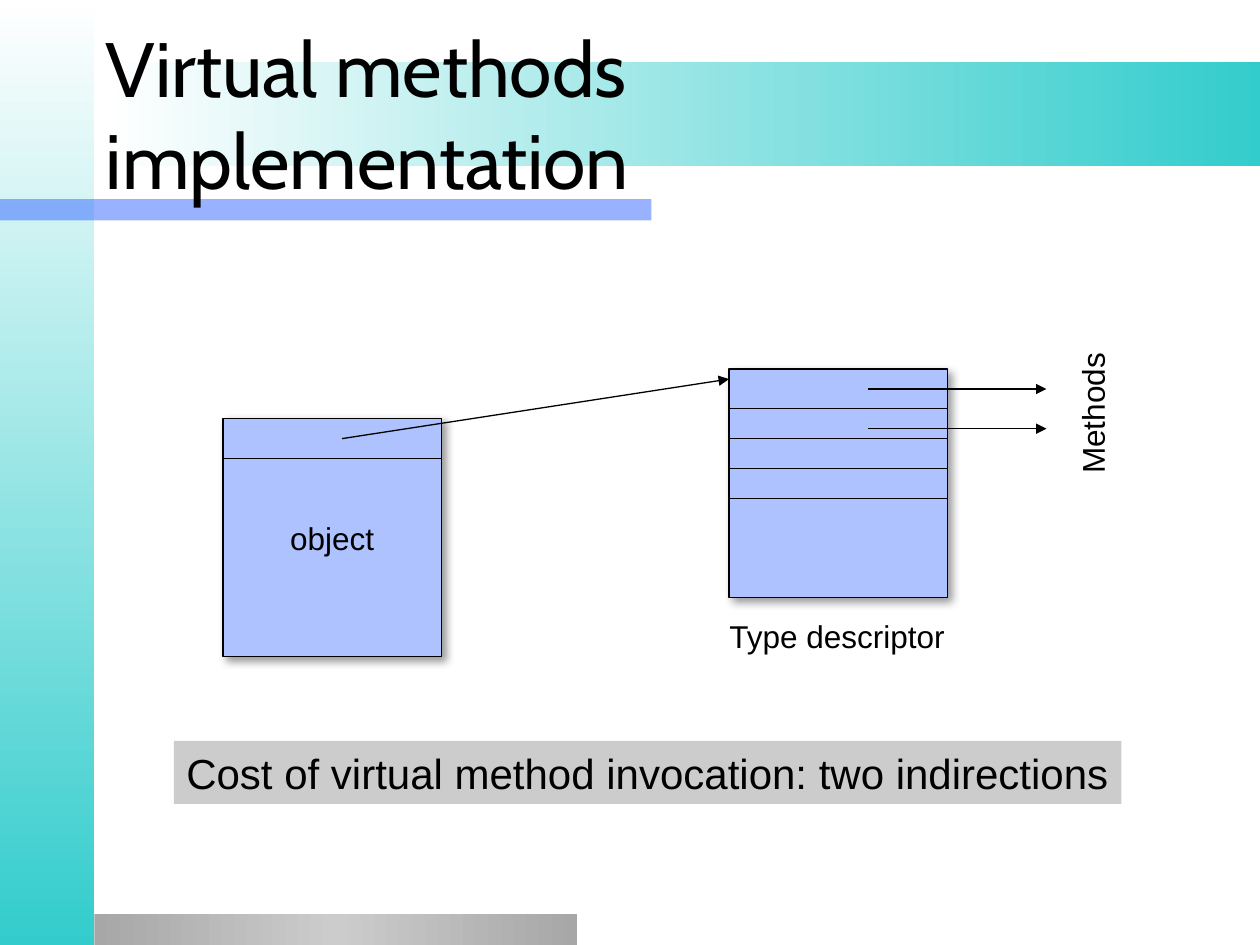
import dataclasses
import pptx
import pptx.dml.color
import pptx.enum.shapes
import pptx.enum.text
import pptx.oxml
import pptx.oxml.ns
import pptx.util

PAGE_WIDTH, PAGE_HEIGHT = 10, 7.5
CELL = 0.2 / 2.54  # diagram grid step: 2 mm in inches
ORIGIN_X, ORIGIN_Y = 1.77, 2.93
DRAWING_NS = pptx.oxml.ns.nsdecls("a")
BLACK, BOX_BLUE, TEAL = "000000", "ADC2FF", "33CCCC"
RECTANGLE = pptx.enum.shapes.MSO_SHAPE.RECTANGLE
ALIGN = pptx.enum.text.PP_ALIGN
inches = pptx.util.Inches


@dataclasses.dataclass
class Band:
    """Backdrop strip, in inches, with evenly spaced gradient colours."""
    left: float
    top: float
    width: float
    height: float
    colours: tuple
    angle: int = 0


@dataclasses.dataclass
class Block:
    """Memory block, in grid columns and rows, with divider offsets."""
    column: int
    row: int
    columns: int
    rows: int
    dividers: tuple


@dataclasses.dataclass
class Label:
    """Caption box in inches."""
    text: str
    left: float
    top: float
    width: float
    height: float
    size: int = 18
    rotation: int = 0
    fill: str = ""


BANDS = [
    Band(0, 0, 0.75, PAGE_HEIGHT, ("FFFFFF", TEAL), 90),
    Band(0, 1.58, 5.17, 0.17, ("3366FF",)),
    Band(0.75, 7.25, 3.83, 0.25, ("A7A7A7", "CCCCCC", "A7A7A7")),
    Band(0.84, 0.49, 9.16, 0.83, ("FFFFFF", TEAL)),
]
OBJECT = Block(0, 5, 22, 24, (4,))
DESCRIPTOR = Block(51, 0, 22, 23, (4, 7, 10, 13))
# Arrows as grid points: column and row from, column and row to
ARROWS = [(12, 7, 51, 1), (65, 2, 83, 2), (65, 6, 83, 6)]
LABELS = [
    Label("Type descriptor", 5.69, 4.85, 1.92, 0.4),
    Label("Methods", 8.09, 3.08, 1.16, 0.4, rotation=270),
    Label("Cost of virtual method invocation: two indirections",
          1.38, 5.88, 7.52, 0.5, size=24, fill="CCCCCC"),
]


def colour(code: str):
    return pptx.dml.color.RGBColor.from_string(code)


def grid_x(column: float):
    return inches(ORIGIN_X + column * CELL)


def grid_y(row: float):
    return inches(ORIGIN_Y + row * CELL)


def append_xml(parent, markup: str) -> None:
    parent.append(pptx.oxml.parse_xml(markup))


def write(shape, text: str, size: int, font: str = "Arial",
          align=ALIGN.LEFT) -> None:
    frame = shape.text_frame
    frame.text = text
    para = frame.paragraphs[0]
    para.alignment = align
    span = para.runs[0]
    span.font.size = pptx.util.Pt(size)
    span.font.name = font
    span.font.color.rgb = colour(BLACK)


def draw_band(page, band: Band) -> None:
    box = page.shapes.add_shape(RECTANGLE, *map(
        inches, (band.left, band.top, band.width, band.height)))
    box.shadow.inherit = False
    box.line.fill.background()
    if len(band.colours) == 1:
        # A single colour is half transparent
        box.fill.solid()
        box.fill.fore_color.rgb = colour(band.colours[0])
        paint = next(box.element.spPr.iter(pptx.oxml.ns.qn("a:srgbClr")))
        append_xml(paint, f'<a:alpha {DRAWING_NS} val="50000"/>')
        return
    box.fill.gradient()
    box.fill.gradient_angle = -band.angle % 360
    stops = next(box.element.spPr.iter(pptx.oxml.ns.qn("a:gsLst")))
    for stop in list(stops):
        stops.remove(stop)
    for index, code in enumerate(band.colours):
        position = 100000 * index // (len(band.colours) - 1)
        append_xml(stops, f'<a:gs {DRAWING_NS} pos="{position}">'
                          f'<a:srgbClr val="{code}"/></a:gs>')


def draw_line(page, start_column: float, start_row: float,
              end_column: float, end_row: float, arrow: bool = False) -> None:
    line = page.shapes.add_connector(
        pptx.enum.shapes.MSO_CONNECTOR.STRAIGHT,
        grid_x(start_column), grid_y(start_row),
        grid_x(end_column), grid_y(end_row))
    line.line.color.rgb = colour(BLACK)
    line.line.width = pptx.util.Pt(0.75)
    if arrow:
        append_xml(line.line._get_or_add_ln(),
                   f'<a:tailEnd {DRAWING_NS} type="triangle"/>')
    append_xml(line.element.spPr, f'<a:effectLst {DRAWING_NS}/>')


def draw_block(page, block: Block):
    box = page.shapes.add_shape(
        RECTANGLE, grid_x(block.column), grid_y(block.row),
        inches(block.columns * CELL), inches(block.rows * CELL))
    box.fill.solid()
    box.fill.fore_color.rgb = colour(BOX_BLUE)
    box.line.color.rgb = colour(BLACK)
    box.line.width = pptx.util.Pt(0.75)
    box.shadow.inherit = False
    effects = box.element.spPr.find(pptx.oxml.ns.qn("a:effectLst"))
    append_xml(effects, f'<a:outerShdw {DRAWING_NS} blurRad="63500" '
                        'dist="38100" dir="2700000" algn="tl" rotWithShape="0">'
                        f'<a:srgbClr val="{BLACK}"><a:alpha val="40000"/>'
                        '</a:srgbClr></a:outerShdw>')
    for offset in block.dividers:
        row = block.row + offset
        draw_line(page, block.column, row, block.column + block.columns, row)
    return box


def draw_label(page, label: Label) -> None:
    box = page.shapes.add_textbox(*map(
        inches, (label.left, label.top, label.width, label.height)))
    write(box, label.text, label.size)
    box.text_frame.word_wrap = False
    box.text_frame.auto_size = pptx.enum.text.MSO_AUTO_SIZE.SHAPE_TO_FIT_TEXT
    box.rotation = label.rotation
    if label.fill:
        box.fill.solid()
        box.fill.fore_color.rgb = colour(label.fill)


def main() -> None:
    deck = pptx.Presentation()
    deck.slide_width, deck.slide_height = inches(PAGE_WIDTH), inches(PAGE_HEIGHT)
    page = deck.slides.add_slide(deck.slide_layouts[5])

    # Backdrop, with the title raised above it
    for band in BANDS:
        draw_band(page, band)
    title = page.shapes.title
    title.element.getparent().append(title.element)
    title.left, title.top = inches(0.74), inches(0.27)
    title.width, title.height = inches(8.5), inches(1.25)
    write(title, "Virtual methods implementation", 44, "Cabin")
    title.text_frame.vertical_anchor = pptx.enum.text.MSO_ANCHOR.MIDDLE
    title.text_frame.auto_size = pptx.enum.text.MSO_AUTO_SIZE.NONE

    # Object and its type descriptor
    object_box = draw_block(page, OBJECT)
    write(object_box, "object", 18, align=ALIGN.CENTER)
    object_box.text_frame.word_wrap = False
    draw_block(page, DESCRIPTOR)

    # References and captions
    for arrow in ARROWS:
        draw_line(page, *arrow, arrow=True)
    for label in LABELS:
        draw_label(page, label)
    deck.save("out.pptx")


if __name__ == "__main__":
    main()
